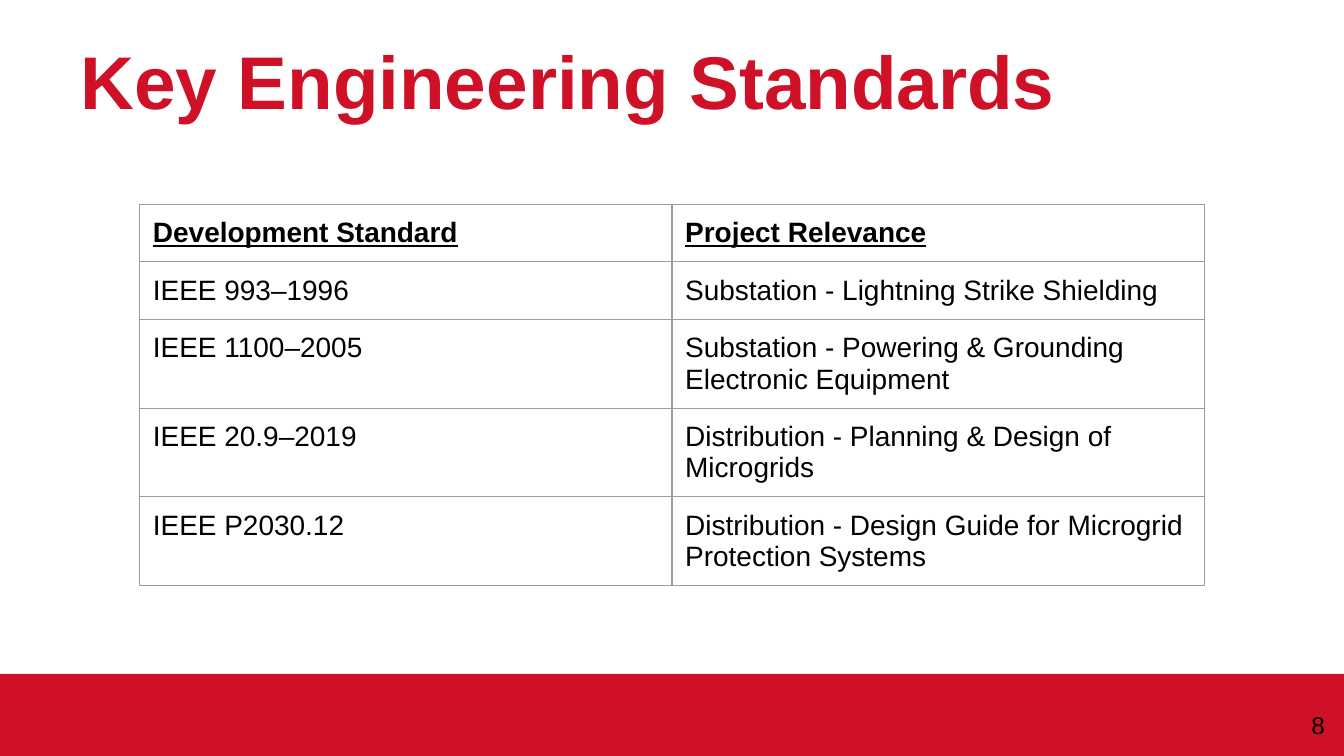
"""Build the Key Engineering Standards slide."""
from dataclasses import dataclass

from lxml import etree
from pptx import Presentation
from pptx import util as u
from pptx.dml.color import RGBColor
from pptx.enum import shapes, text
from pptx.oxml.ns import qn


@dataclass(frozen=True)
class Theme:
    """Colours, type sizes and measures of the slide."""
    font: str = "Arial"
    red: str = "CE1126"
    ink: str = "000000"
    paper: str = "FFFFFF"
    rule: str = "9E9E9E"
    rule_width: float = 0.75
    title_size: int = 40
    table_size: int = 15
    number_size: int = 13
    inset: float = 0.25


def write(frame, content, *, theme, size, color, bold=False, underline=False,
          align=text.PP_ALIGN.LEFT, anchor=text.MSO_ANCHOR.TOP, inset_y=None):
    """Put formatted text in a frame."""
    frame.word_wrap = True
    frame.auto_size = text.MSO_AUTO_SIZE.NONE
    frame.vertical_anchor = anchor
    frame.margin_left = frame.margin_right = u.Cm(theme.inset)
    frame.margin_top = frame.margin_bottom = u.Cm(
        theme.inset if inset_y is None else inset_y)
    paragraph = frame.paragraphs[0]
    paragraph.alignment = align
    run = paragraph.add_run()
    run.text = content
    font = run.font
    font.name, font.size = theme.font, u.Pt(size)
    font.bold, font.underline = bold, underline
    font.color.rgb = RGBColor.from_string(color)


class Deck:
    """Hold the theme and the current slide."""

    def __init__(self, theme, width, height):
        self.theme = theme
        self.presentation = Presentation()
        self.presentation.slide_width = u.Cm(width)
        self.presentation.slide_height = u.Cm(height)
        self.slide = None

    def add_slide(self):
        """Start a title-only slide on a plain background."""
        layout = self.presentation.slide_layouts[5]
        self.slide = self.presentation.slides.add_slide(layout)
        fill = self.slide.background.fill
        fill.solid()
        fill.fore_color.rgb = RGBColor.from_string(self.theme.paper)

    def title(self, content, left, top, width, height):
        """Place and fill the title placeholder."""
        heading = self.slide.shapes.title
        heading.left, heading.top = u.Cm(left), u.Cm(top)
        heading.width, heading.height = u.Cm(width), u.Cm(height)
        write(heading.text_frame, content, theme=self.theme,
              size=self.theme.title_size, color=self.theme.red, bold=True,
              anchor=text.MSO_ANCHOR.MIDDLE, inset_y=0.13)

    def band(self, left, top, width, height):
        """Draw a solid colour band."""
        footer = self.slide.shapes.add_shape(
            shapes.MSO_SHAPE.RECTANGLE, *map(u.Cm, (left, top, width, height)))
        footer.shadow.inherit = False
        footer.fill.solid()
        footer.fill.fore_color.rgb = RGBColor.from_string(self.theme.red)
        footer.line.fill.background()

    def page_number(self, content, left, top, width, height):
        """Write the right-aligned page number."""
        number = self.slide.shapes.add_textbox(
            *map(u.Cm, (left, top, width, height)))
        write(number.text_frame, content, theme=self.theme,
              size=self.theme.number_size, color=self.theme.ink,
              align=text.PP_ALIGN.RIGHT)

    def table(self, entries, left, top, width, row_height):
        """Draw a ruled table with an emphasised heading row."""
        rows, columns = len(entries), len(entries[0])
        standards = self.slide.shapes.add_table(
            rows, columns, u.Cm(left), u.Cm(top), u.Cm(width),
            u.Cm(row_height * rows)).table
        standards.first_row = standards.horz_banding = False
        for r, entry in enumerate(entries):
            for c, content in enumerate(entry):
                cell = standards.cell(r, c)
                write(cell.text_frame, content, theme=self.theme,
                      size=self.theme.table_size, color=self.theme.ink,
                      bold=r == 0, underline=r == 0)
                cell.margin_left = cell.margin_right = u.Cm(self.theme.inset)
                cell.margin_top = cell.margin_bottom = u.Cm(self.theme.inset)
                cell.vertical_anchor = text.MSO_ANCHOR.TOP
                cell.fill.background()
                self.cell_borders(cell)

    def cell_borders(self, cell):
        """Rule all four sides of a cell."""
        properties = cell._tc.get_or_add_tcPr()
        for index, side in enumerate(("lnL", "lnR", "lnT", "lnB")):
            line = etree.Element(qn(f"a:{side}"),
                                 w=str(u.Pt(self.theme.rule_width)))
            fill = etree.SubElement(line, qn("a:solidFill"))
            etree.SubElement(fill, qn("a:srgbClr"), val=self.theme.rule)
            properties.insert(index, line)


STANDARDS = [
    ("Development Standard", "Project Relevance"),
    ("IEEE 993–1996", "Substation - Lightning Strike Shielding"),
    ("IEEE 1100–2005",
     "Substation - Powering & Grounding Electronic Equipment"),
    ("IEEE 20.9–2019", "Distribution - Planning & Design of Microgrids"),
    ("IEEE P2030.12",
     "Distribution - Design Guide for Microgrid Protection Systems"),
]


def main():
    """Build and save the slide."""
    deck = Deck(Theme(), 25.4, 14.29)
    deck.add_slide()
    deck.band(0, 12.74, 25.4, 1.55)
    deck.title("Key Engineering Standards", 1.27, 0.3, 22.86, 2.4)
    deck.table(STANDARDS, 2.64, 3.86, 20.12, 1.07)
    deck.page_number("8", 23.77, 13.18, 1.52, 1.09)
    deck.presentation.save("out.pptx")


if __name__ == "__main__":
    main()
